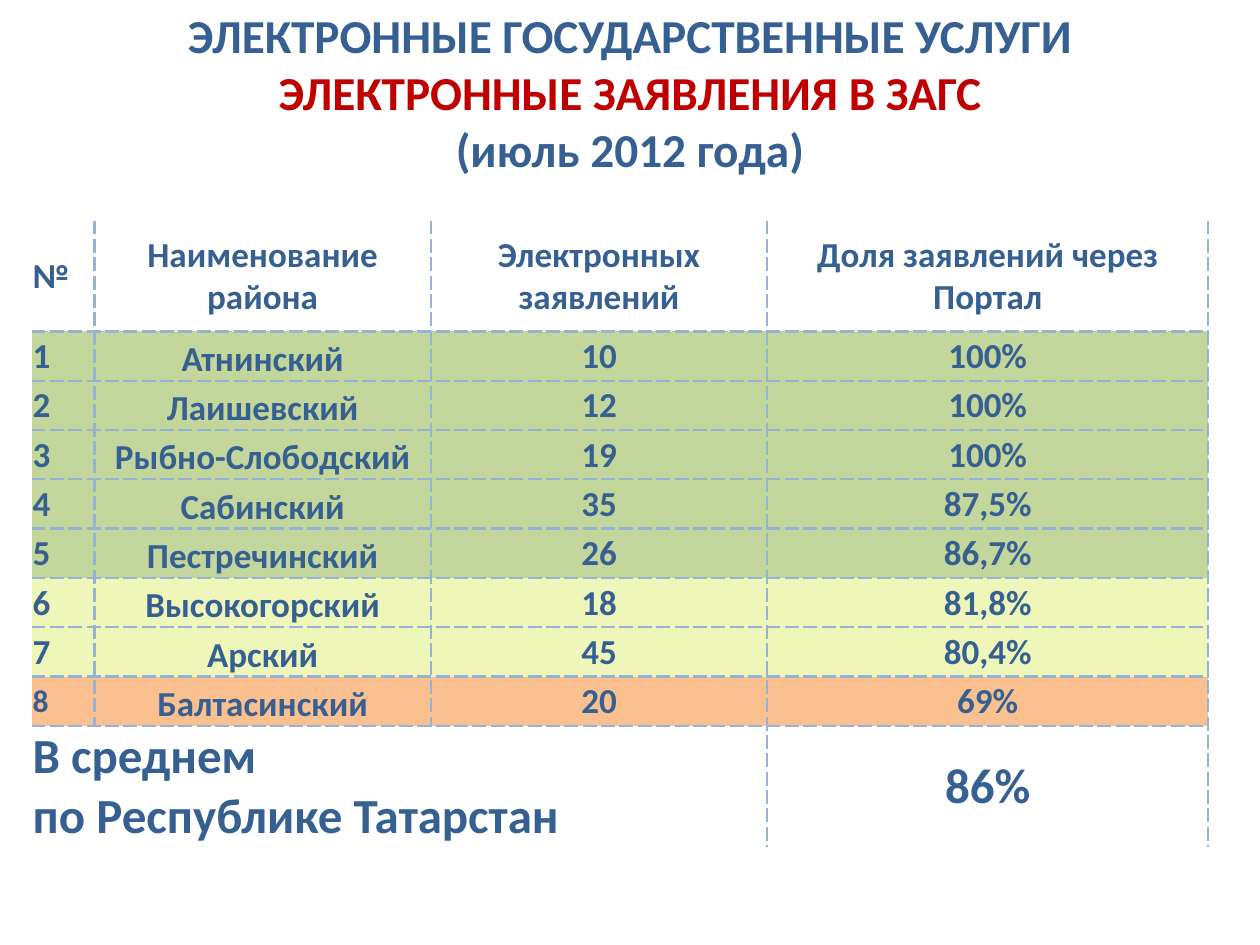
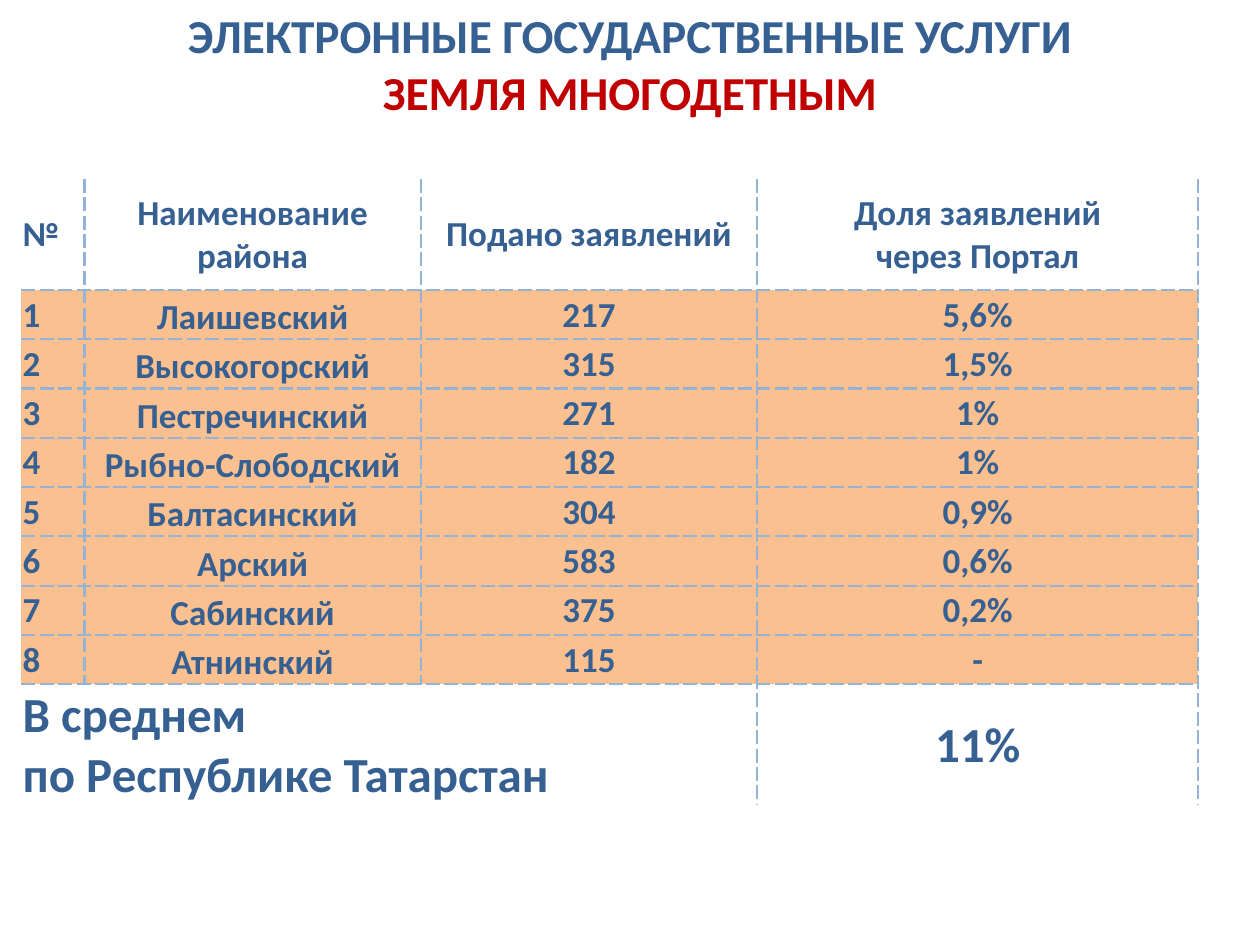
"""Build two slides ranking districts by electronic applications."""
from lxml import etree
from pptx import Presentation
from pptx.dml.color import RGBColor
from pptx.enum.text import MSO_ANCHOR, MSO_AUTO_SIZE, PP_ALIGN
from pptx.oxml.ns import qn
from pptx.util import Inches, Pt

LEFT, CENTER = PP_ALIGN.LEFT, PP_ALIGN.CENTER
TOP, MIDDLE = MSO_ANCHOR.TOP, MSO_ANCHOR.MIDDLE
NO_AUTOFIT = MSO_AUTO_SIZE.NONE

BLUE = RGBColor(0x37, 0x60, 0x92)
RED = RGBColor(0xC0, 0x00, 0x00)
GREEN = RGBColor(0xC3, 0xD6, 0x9B)
YELLOW = RGBColor(0xEE, 0xF7, 0xB9)
ORANGE = RGBColor(0xFA, 0xC0, 0x90)
BORDER = RGBColor(0x95, 0xB3, 0xD7)

FONT = "Calibri"
TITLE_SIZE, BODY_SIZE, SUMMARY_SIZE = 27, 20, 28
SERVICE = "ЭЛЕКТРОННЫЕ ГОСУДАРСТВЕННЫЕ УСЛУГИ"
SUMMARY = ["В среднем", "по Республике Татарстан"]
COLUMN_WIDTHS = [0.5, 2.67, 2.67, 3.5]
HEADER_HEIGHT, ROW_HEIGHT, SUMMARY_HEIGHT = 0.88, 0.38, 0.94
TIGHT_MARGINS = (0.01, 0.01, 0.01, 0)
NAME_MARGINS = (0.07, 0, 0.07, 0)
PLAIN_TABLE_STYLE = "{2D5ABB26-0587-4C30-8999-92F81FD0307C}"

SLIDES = [
    {
        "title": [(SERVICE, BLUE), ("ЭЛЕКТРОННЫЕ ЗАЯВЛЕНИЯ В ЗАГС", RED), ("(июль 2012 года)", BLUE)],
        "title_height": 1.46,
        "table_at": (0.25, 1.75),
        "header": [["№"], ["Наименование района"], ["Электронных заявлений"],
                   ["Доля заявлений через Портал"]],
        "districts": [
            ("Атнинский", "10", "100%", GREEN),
            ("Лаишевский", "12", "100%", GREEN),
            ("Рыбно-Слободский", "19", "100%", GREEN),
            ("Сабинский", "35", "87,5%", GREEN),
            ("Пестречинский", "26", "86,7%", GREEN),
            ("Высокогорский", "18", "81,8%", YELLOW),
            ("Арский", "45", "80,4%", YELLOW),
            ("Балтасинский", "20", "69%", ORANGE),
        ],
        "last_number_size": 18,
        "average": "86%",
    },
    {
        "title": [(SERVICE, BLUE), ("ЗЕМЛЯ МНОГОДЕТНЫМ", RED)],
        "title_height": 1.01,
        "table_at": (0.17, 1.42),
        "header": [["№"], ["Наименование района"], ["Подано заявлений"],
                   ["Доля заявлений", "через Портал"]],
        "districts": [
            ("Лаишевский", "217", "5,6%", ORANGE),
            ("Высокогорский", "315", "1,5%", ORANGE),
            ("Пестречинский", "271", "1%", ORANGE),
            ("Рыбно-Слободский", "182", "1%", ORANGE),
            ("Балтасинский", "304", "0,9%", ORANGE),
            ("Арский", "583", "0,6%", ORANGE),
            ("Сабинский", "375", "0,2%", ORANGE),
            ("Атнинский", "115", "-", ORANGE),
        ],
        "last_number_size": BODY_SIZE,
        "average": "11%",
    },
]


def write_lines(frame, lines, size, align, spacing=None):
    """Write (text, colour) lines as bold paragraphs."""
    for index, (text, color) in enumerate(lines):
        para = frame.add_paragraph() if index else frame.paragraphs[0]
        para.alignment = align
        if spacing:
            para.line_spacing = spacing
        span = para.add_run()
        span.text = text
        span.font.name = FONT
        span.font.size = Pt(size)
        span.font.bold = True
        span.font.color.rgb = color


def add_title(page, lines, height):
    """Place the title across the top of the page."""
    box = page.shapes.title
    box.left, box.top, box.width, box.height = 0, 0, Inches(10), Inches(height)
    frame = box.text_frame
    frame.auto_size = NO_AUTOFIT
    frame.vertical_anchor = TOP
    write_lines(frame, lines, TITLE_SIZE, CENTER)


def draw_borders(cell, sides):
    """Draw dashed borders on the named sides of a cell."""
    properties = cell._tc.get_or_add_tcPr()
    for side in sides:
        line = etree.SubElement(properties, qn(f"a:ln{side}"), w=str(Pt(1.5)))
        fill = etree.SubElement(line, qn("a:solidFill"))
        etree.SubElement(fill, qn("a:srgbClr"), val=str(BORDER))
        etree.SubElement(line, qn("a:prstDash"), val="sysDash")


def fill_cell(cell, lines, sides, size=BODY_SIZE, align=CENTER, fill=None, is_name=False):
    """Format one cell and write its lines."""
    margins = NAME_MARGINS if is_name else TIGHT_MARGINS
    cell.margin_left, cell.margin_top, cell.margin_right, cell.margin_bottom = map(Inches, margins)
    cell.vertical_anchor = TOP if is_name else MIDDLE
    draw_borders(cell, sides)
    if fill is None:
        cell.fill.background()
    else:
        cell.fill.solid()
        cell.fill.fore_color.rgb = fill
    write_lines(cell.text_frame, [(text, BLUE) for text in lines], size, align,
                1.15 if is_name else None)


def add_ranking(page, content):
    """Add the district table with its header and average rows."""
    districts = content["districts"]
    heights = [HEADER_HEIGHT] + [ROW_HEIGHT] * len(districts) + [SUMMARY_HEIGHT]
    left, top = content["table_at"]
    table = page.shapes.add_table(
        len(heights), len(COLUMN_WIDTHS), Inches(left), Inches(top),
        Inches(sum(COLUMN_WIDTHS)), Inches(sum(heights))).table
    table.first_row = table.horz_banding = False
    table._tbl.tblPr.find(qn("a:tableStyleId")).text = PLAIN_TABLE_STYLE
    for column, width in zip(table.columns, COLUMN_WIDTHS):
        column.width = Inches(width)
    for row, height in zip(table.rows, heights):
        row.height = Inches(height)

    for column, lines in enumerate(content["header"]):
        fill_cell(table.cell(0, column), lines, "LRB" if column else "RB",
                  align=CENTER if column else LEFT)

    for number, (name, count, share, color) in enumerate(districts, 1):
        is_last = number == len(districts)
        for column, text in enumerate([str(number), name, count, share]):
            size = content["last_number_size"] if is_last and column == 0 else BODY_SIZE
            fill_cell(table.cell(number, column), [text], "LRTB" if column else "RTB", size,
                      CENTER if column else LEFT, color, is_name=column == 1)

    last = len(heights) - 1
    table.cell(last, 0).merge(table.cell(last, 2))
    fill_cell(table.cell(last, 0), SUMMARY, "RT", SUMMARY_SIZE, LEFT)
    fill_cell(table.cell(last, 3), [content["average"]], "LRT", SUMMARY_SIZE)


def main():
    """Build and save the deck."""
    deck = Presentation()
    deck.slide_width, deck.slide_height = Inches(10), Inches(7.5)
    for content in SLIDES:
        page = deck.slides.add_slide(deck.slide_layouts[5])
        add_title(page, content["title"], content["title_height"])
        add_ranking(page, content)
    deck.save("out.pptx")


if __name__ == "__main__":
    main()
